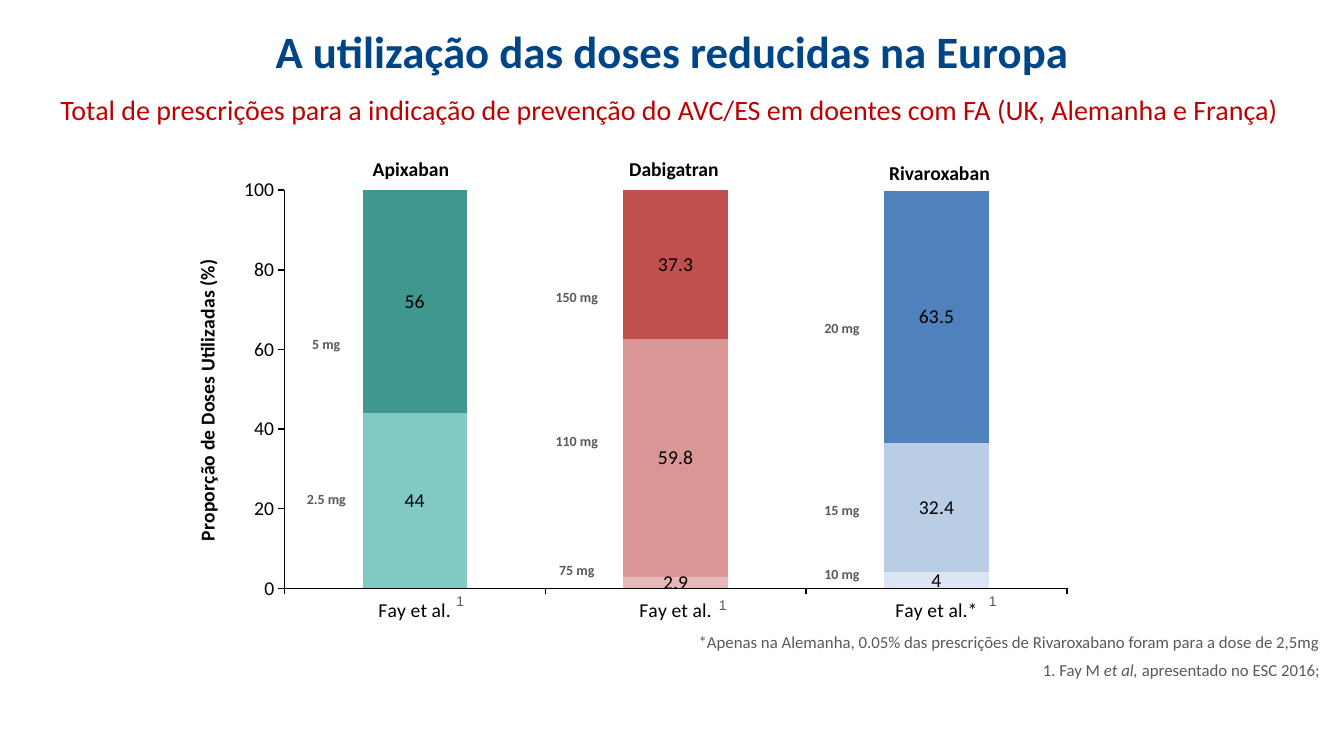
from lxml import etree
from pptx import Presentation
from pptx import util as u
from pptx.chart.data import CategoryChartData
from pptx.dml.color import RGBColor
from pptx.enum import chart as ch
from pptx.enum import text
from pptx.util import Cm, Pt

COLORS = {"title": "004586", "subtitle": "C00000", "black": "000000", "grey": "595959"}
LEFT, CENTER, RIGHT = text.PP_ALIGN.LEFT, text.PP_ALIGN.CENTER, text.PP_ALIGN.RIGHT


def style(font, size, color, bold=False, name="Calibri"):
    font.name, font.size, font.bold = name, Pt(size), bold
    font.color.rgb = RGBColor.from_string(COLORS[color])


def add_label(words, box, size, color, bold=False, name="Calibri", align=LEFT,
              anchor=text.MSO_ANCHOR.TOP, wrap=False):
    """Add a one-line text box; box is left, top, width, height in cm."""
    tf = s.shapes.add_textbox(*(Cm(v) for v in box)).text_frame
    tf.word_wrap = wrap
    tf.vertical_anchor = anchor
    p = tf.paragraphs[0]
    p.text, p.alignment = words, align
    style(p.runs[0].font, size, color, bold, name)
    return tf


prs = Presentation()
prs.slide_width, prs.slide_height = u.Inches(13.33), u.Inches(7.5)
s = prs.slides.add_slide(prs.slide_layouts[5])

# Title and subtitle
title = s.shapes.title
title.left, title.top, title.width, title.height = Cm(1.7), Cm(0.43), Cm(30.48), Cm(1.68)
tf = title.text_frame
tf.text = "A utilização das doses reducidas na Europa"
tf.vertical_anchor = text.MSO_ANCHOR.MIDDLE
tf.paragraphs[0].alignment = CENTER
style(tf.paragraphs[0].runs[0].font, 32, "title", True)

tf = add_label("Total de prescrições para a indicação de prevenção do AVC/ES em doentes "
               "com FA (UK, Alemanha e França)",
               (0.64, 2.31, 32.44, 1.47), 20, "subtitle", align=CENTER, wrap=True)
tf.paragraphs[0].line_spacing = 0.9

# Stacked columns: values and one colour per column
doses = [
    ("Series 1", (None, 2.9, 4), ("7CC8C2", "E6B9B8", "DCE6F2")),
    ("Series 2", (44, 59.8, 32.4), ("80CAC3", "D99694", "B9CDE5")),
    ("Series 3", (56, 37.3, 63.5), ("3F978F", "C0504D", "4F81BD")),
]
data = CategoryChartData()
data.categories = ["Fay et al.", "Fay et al.", "Fay et al.*"]
for name, values, _ in doses:
    data.add_series(name, values)
chart = s.shapes.add_chart(ch.XL_CHART_TYPE.COLUMN_STACKED, Cm(4.47), Cm(4.29),
                           Cm(23.01), Cm(12.27), data).chart
chart.has_legend = chart.has_title = False
style(chart.font, 14, "black")

plot = chart.plots[0]
plot.gap_width, plot.overlap, plot.vary_by_categories = 150, 100, False
for series, (_, values, fills) in zip(plot.series, doses):
    for i, color in enumerate(fills):
        if values[i] is not None:
            fill = series.points[i].format.fill
            fill.solid()
            fill.fore_color.rgb = RGBColor.from_string(color)
    labels = series.data_labels
    labels.show_value = True
    labels.position = ch.XL_LABEL_POSITION.CENTER
    style(labels.font, 14, "black")

for axis in (chart.category_axis, chart.value_axis):
    axis.has_major_gridlines = False
    axis.major_tick_mark = ch.XL_TICK_MARK.OUTSIDE
    axis.format.line.color.rgb = RGBColor.from_string(COLORS["black"])
    axis.format.line.width = Pt(1)
axis = chart.value_axis
axis.minimum_scale, axis.maximum_scale, axis.major_unit = 0, 100, 20
axis.axis_title.text_frame.text = "Proporção de Doses Utilizadas (%)"
style(axis.axis_title.text_frame.paragraphs[0].runs[0].font, 14, "black", True)

# Fixed inner plot area
C = "{http://schemas.openxmlformats.org/drawingml/2006/chart}"
area = chart.element.find(f".//{C}plotArea")
for old in area.findall(f"{C}layout"):
    area.remove(old)
layout = etree.Element(f"{C}layout")
manual = etree.SubElement(layout, f"{C}manualLayout")
for tag, val in [("layoutTarget", "inner"), ("xMode", "edge"), ("yMode", "edge"),
                 ("x", "0.117"), ("y", "0.041"), ("w", "0.857"), ("h", "0.818")]:
    etree.SubElement(manual, f"{C}{tag}").set("val", val)
area.insert(0, layout)

# Footnotes
tf = add_label("*Apenas na Alemanha, 0.05% das prescrições de Rivaroxabano foram para a dose de 2,5mg",
               (10.06, 15.9, 23.19, 1.24), 12, "grey", align=RIGHT,
               anchor=text.MSO_ANCHOR.BOTTOM, wrap=True)
tf.margin_left = tf.margin_right = tf.margin_top = tf.margin_bottom = 0
p = tf.add_paragraph()
p.alignment, p.space_before = RIGHT, Pt(6)
for words, italic in [("1. Fay M ", False), ("et al, ", True), ("apresentado no ESC 2016;", False)]:
    r = p.add_run()
    r.text = words
    style(r.font, 12, "grey")
    r.font.italic = italic

# Per drug: heading box, reference mark position, centre of dose labels, dose tops
drugs = [
    ("Apixaban", (9.14, 3.84, 2.44), (11.25, 14.81), 8.22,
     [("5 mg", 8.31), ("2.5 mg", 12.22)]),
    ("Dabigatran", (15.6, 3.84, 2.79), (17.86, 14.91), 14.53,
     [("150 mg", 7.14), ("110 mg", 10.77), ("75 mg", 14.02)]),
    ("Rivaroxaban", (22.15, 3.94, 3.07), (24.66, 14.81), 21.21,
     [("20 mg", 7.92), ("15 mg", 12.5), ("10 mg", 14.12)]),
]
DOSE_W, SMALL_H = 1.6, 0.69
for drug, heading, mark, center, dose_tops in drugs:
    add_label(drug, (*heading, 0.86), 14, "black", True)
    add_label("1", (*mark, 0.71, SMALL_H), 10, "grey", name="Arial",
              anchor=text.MSO_ANCHOR.MIDDLE)
    for dose, top in dose_tops:
        add_label(dose, (center - DOSE_W / 2, top, DOSE_W, SMALL_H), 10, "grey", True,
                  align=CENTER, anchor=text.MSO_ANCHOR.MIDDLE)

prs.save("out.pptx")
